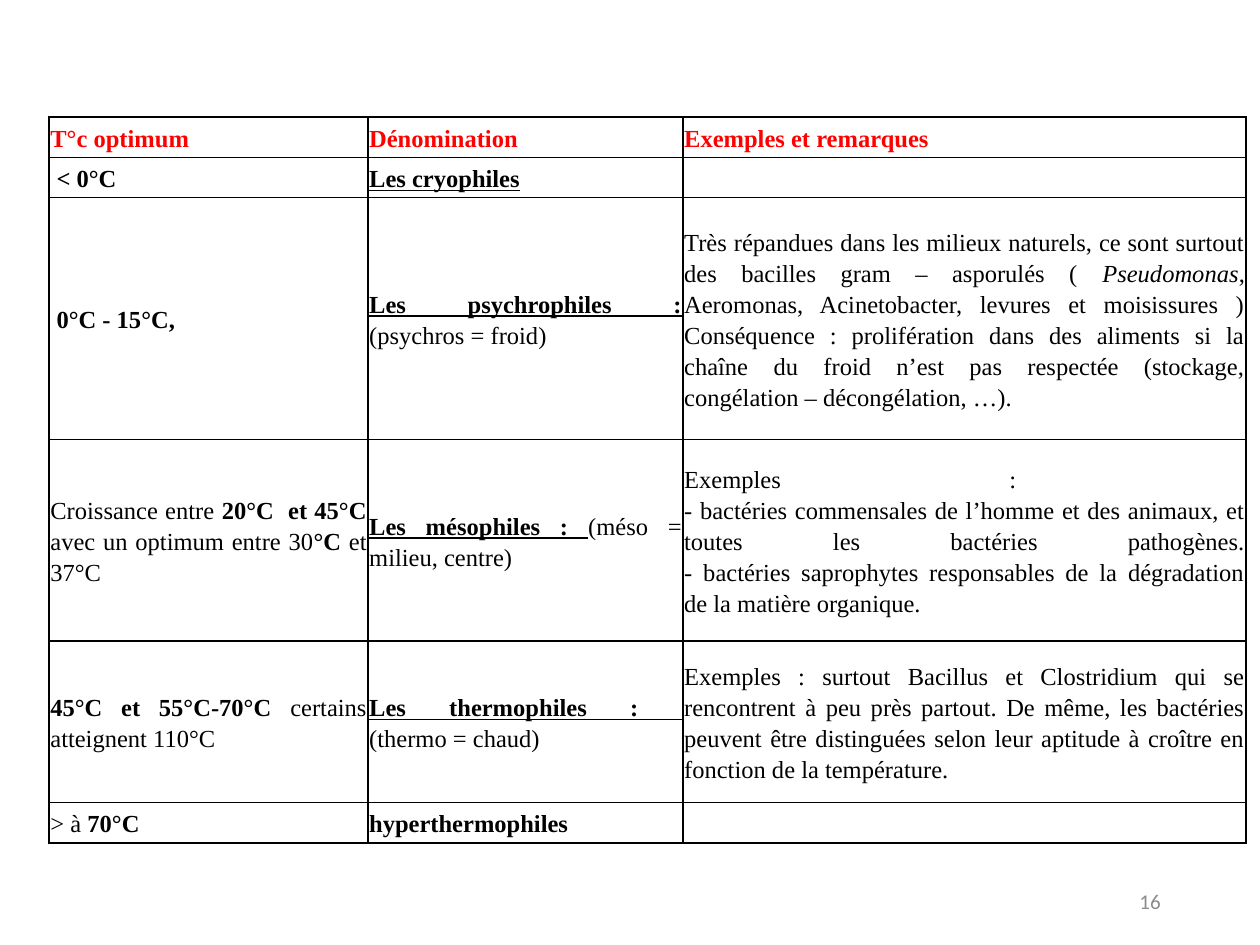
from lxml.etree import SubElement
from pptx import Presentation
from pptx.dml.color import RGBColor
from pptx.enum.text import MSO_ANCHOR, PP_ALIGN
from pptx.oxml.ns import qn
from pptx.util import Inches, Pt

WIDTH, HEIGHT = 10, 7.5
COLS = [2.53, 2.5, 4.47]
ROWS = [0.32, 0.32, 1.92, 1.6, 1.28, 0.32]
SERIF = "Times New Roman"
HEAD = ["T°c optimum", "Dénomination", "Exemples et remarques"]
BODY = [
    [[[(" < 0°C ", "b")]], [[("Les cryophiles", "bu")]], [[("", "")]]],
    [
        [[(" 0°C - 15°C,", "b")]],
        [[("Les psychrophiles :\n", "bu"), ("(psychros = froid)", "")]],
        [[
            ("Très répandues dans les milieux naturels, ce sont surtout des "
             "bacilles gram – asporulés ( ", ""),
            ("Pseudomonas", "i"),
            (", Aeromonas, Acinetobacter, levures et moisissures )\n"
             "Conséquence : prolifération dans des aliments si la chaîne du "
             "froid n’est pas respectée (stockage, congélation – "
             "décongélation, …).", ""),
        ]],
    ],
    [
        [
            [("Croissance entre ", ""), ("20°C  et 45°C ", "b")],
            [("avec un optimum entre 30", ""), ("°C", "b"), (" et 37°C", "")],
        ],
        [[("Les mésophiles : ", "bu"), ("(méso = milieu, centre)", "")]],
        [[("Exemples : \n- bactéries commensales de l’homme et des animaux, "
           "et toutes les bactéries pathogènes.\n- bactéries saprophytes "
           "responsables de la dégradation de la matière organique.", "")]],
    ],
    [
        [[("45°C et 55°C-70°C", "b"), (" certains atteignent 110°C", "")]],
        [[("Les thermophiles : \n", "bu"), ("(thermo = chaud)", "")]],
        [[("Exemples : surtout Bacillus et Clostridium qui se rencontrent à "
           "peu près partout. De même, les bactéries peuvent être distinguées "
           "selon leur aptitude à croître en fonction de la température. ",
           "")]],
    ],
    [[[("> à ", ""), ("70°C ", "b")]], [[("hyperthermophiles", "b")]], [[("", "")]]],
]


def paint(code):
    """Turn a hex string into a colour."""
    return RGBColor.from_string(code)


def write(para, text, style="", size=14, font=SERIF, color="000000"):
    """Add text to a paragraph; style holds b, i and u, newlines break lines."""
    for num, line in enumerate(text.split("\n")):
        if num:
            para.add_line_break()
        if num and not line:
            continue
        run = para.add_run()
        run.text = line
        face = run.font
        face.name, face.size = font, Pt(size)
        face.color.rgb = paint(color)
        face.bold, face.italic, face.underline = (key in style for key in "biu")


def frame(cell, color="000000", width=1):
    """Draw the four borders of a cell and clear its fill."""
    props = cell._tc.get_or_add_tcPr()
    for side in ("a:lnL", "a:lnR", "a:lnT", "a:lnB"):
        line = SubElement(props, qn(side), w=str(Pt(width)))
        fill = SubElement(line, qn("a:solidFill"))
        SubElement(fill, qn("a:srgbClr"), val=color)
    cell.fill.background()


def fill_cell(cell, paras, color):
    """Set the layout of a cell and write its paragraphs."""
    cell.vertical_anchor = MSO_ANCHOR.MIDDLE
    cell.margin_left = cell.margin_right = Inches(0.01)
    cell.margin_top = cell.margin_bottom = Inches(0.01)
    frame(cell)
    body = cell.text_frame
    for num, runs in enumerate(paras):
        para = body.add_paragraph() if num else body.paragraphs[0]
        para.alignment, para.line_spacing = PP_ALIGN.JUSTIFY, 1.15
        for text, style in runs:
            write(para, text, style, color=color)


def add_grid(slide, left, top):
    """Place the table of temperature classes."""
    data = [[[[(text, "b")]] for text in HEAD]] + BODY
    box = [Inches(n) for n in (left, top, sum(COLS), sum(ROWS))]
    table = slide.shapes.add_table(len(ROWS), len(COLS), *box).table
    table.first_row = table.horz_banding = False
    for col, size in zip(table.columns, COLS):
        col.width = Inches(size)
    for row, size in zip(table.rows, ROWS):
        row.height = Inches(size)
    for r, line in enumerate(data):
        for c, paras in enumerate(line):
            fill_cell(table.cell(r, c), paras, "000000" if r else "FF0000")


def add_number(slide, left, top, width, height):
    """Place the page number."""
    box = slide.shapes.add_textbox(*(Inches(n) for n in (left, top, width, height)))
    body = box.text_frame
    body.word_wrap, body.vertical_anchor = True, MSO_ANCHOR.MIDDLE
    para = body.paragraphs[0]
    para.alignment = PP_ALIGN.RIGHT
    write(para, "16", size=12, font="Calibri", color="8C8C8C")


def main():
    """Build the slide and save it."""
    deck = Presentation()
    deck.slide_width, deck.slide_height = Inches(WIDTH), Inches(HEIGHT)
    slide = deck.slides.add_slide(deck.slide_layouts[6])
    add_grid(slide, 0.39, 0.93)
    add_number(slide, 7.06, 6.95, 2.25, 0.4)
    deck.save("out.pptx")


if __name__ == "__main__":
    main()
